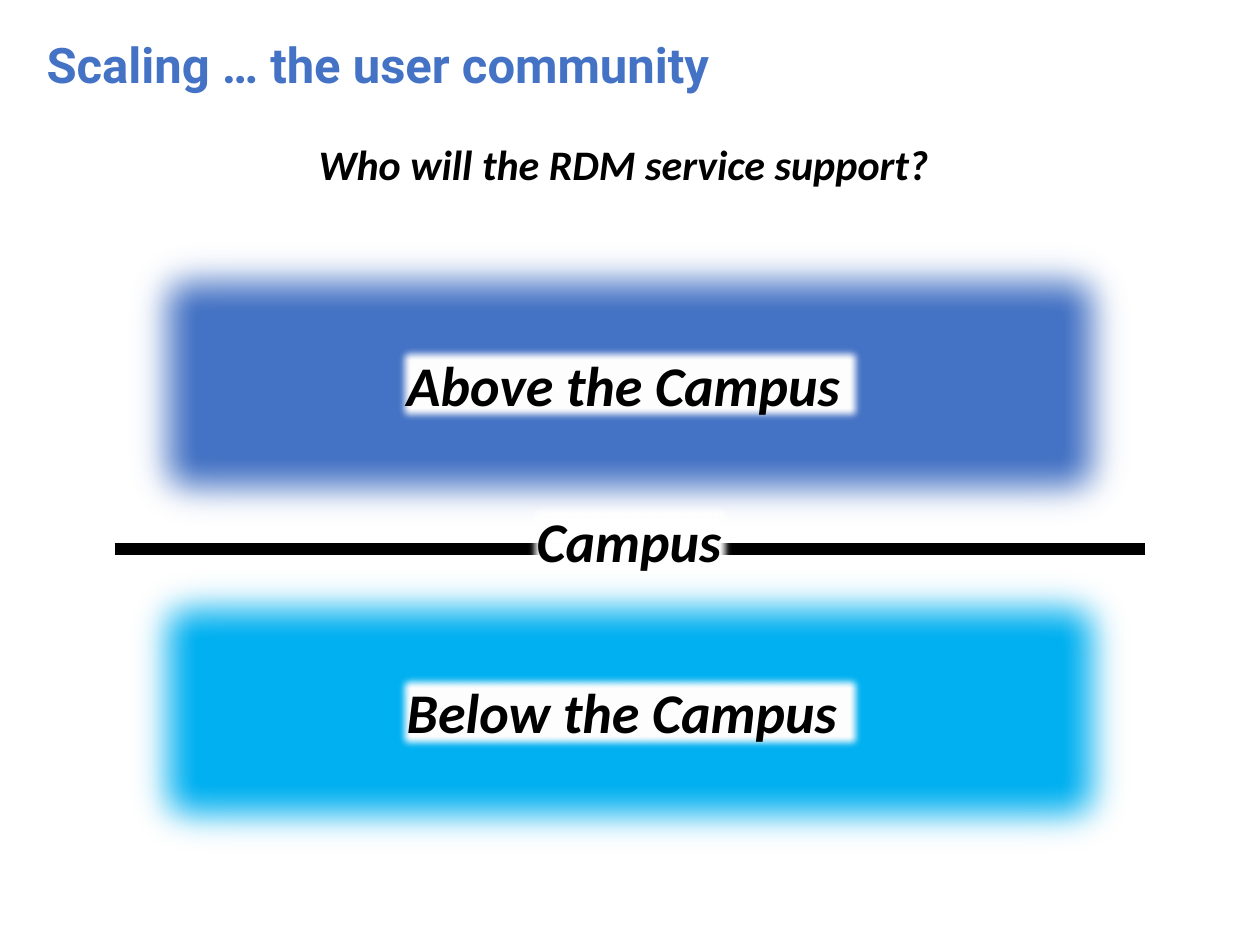
import pptx
import pptx.dml.color
import pptx.enum.shapes
import pptx.enum.text
import pptx.oxml
import pptx.oxml.ns
import pptx.util
from dataclasses import dataclass

Inches = pptx.util.Inches
Pt = pptx.util.Pt


@dataclass(frozen=True)
class Theme:
    blue: str = "4472C4"
    sky: str = "00B0F0"
    edge: str = "325491"
    black: str = "000000"
    white: str = "FFFFFF"
    head: str = "Roboto"
    body: str = "Calibri"
    title: int = 28
    ask: int = 24
    label: int = 32
    rule: int = 7
    blur: int = 25  # soft edge of the bands
    haze: int = 5   # soft edge of the labels


THEME = Theme()


def rgb(code):
    return pptx.dml.color.RGBColor.from_string(code)


def write(frame, text, size, font, color, italic=True, wrap=False):
    """Put one bold, left-aligned run into a text frame."""
    frame.word_wrap = wrap
    frame.auto_size = pptx.enum.text.MSO_AUTO_SIZE.SHAPE_TO_FIT_TEXT
    frame.vertical_anchor = pptx.enum.text.MSO_ANCHOR.TOP
    para = frame.paragraphs[0]
    para.alignment = pptx.enum.text.PP_ALIGN.LEFT
    run = para.add_run()
    run.text = text
    run.font.size = Pt(size)
    run.font.name = font
    run.font.bold = True
    run.font.italic = italic
    run.font.color.rgb = rgb(color)


def effect(shape, soft=None):
    """Replace the theme shadow with a soft edge or with nothing."""
    props = shape._element.spPr
    for old in props.findall(pptx.oxml.ns.qn("a:effectLst")):
        props.remove(old)
    edge = f'<a:softEdge rad="{Pt(soft)}"/>' if soft else ""
    space = pptx.oxml.ns.nsdecls("a")
    props.append(pptx.oxml.parse_xml(
        f"<a:effectLst {space}>{edge}</a:effectLst>"))


def block(slide, box, fill, soft, line=None):
    """Draw a rectangle with soft edges."""
    rect = pptx.enum.shapes.MSO_SHAPE.RECTANGLE
    shape = slide.shapes.add_shape(rect, *map(Inches, box))
    shape.fill.solid()
    shape.fill.fore_color.rgb = rgb(fill)
    if line:
        shape.line.color.rgb = rgb(line)
        shape.line.width = Pt(1)
    else:
        shape.line.fill.background()
    effect(shape, soft)
    return shape


def label(slide, box, width, text):
    """Centre a white label in the given box."""
    left, top, wide, high = box
    tall = 0.64
    place = (left + (wide - width) / 2, top + (high - tall) / 2, width, tall)
    shape = block(slide, place, THEME.white, THEME.haze)
    write(shape.text_frame, text, THEME.label, THEME.body, THEME.black,
          wrap=True)


def header(slide, box):
    """Title, with the question centred below it."""
    left, top, wide, high = box
    title = slide.shapes.title
    title.left, title.top = Inches(left), Inches(top)
    title.width, title.height = Inches(5.81), Inches(0.57)
    write(title.text_frame, "Scaling … the user community",
          THEME.title, THEME.head, THEME.blue, italic=False)
    span, tall = 5.14, 0.5
    ask = slide.shapes.add_textbox(
        Inches(left + (wide - span) / 2), Inches(top + high - tall),
        Inches(span), Inches(tall))
    write(ask.text_frame, "Who will the RDM service support?",
          THEME.ask, THEME.body, THEME.black)


def levels(slide, box):
    """Two bands, parted by the campus line."""
    left, top, wide, high = box
    tall, step = 2.48, 2.6
    mid = top + 2.55
    upper = (left, top, wide, tall)
    lower = (left, top + step, wide, tall)

    # Campus line
    rule = slide.shapes.add_connector(
        pptx.enum.shapes.MSO_CONNECTOR.STRAIGHT,
        Inches(left), Inches(mid), Inches(left + wide), Inches(mid))
    rule.line.color.rgb = rgb(THEME.black)
    rule.line.width = Pt(THEME.rule)
    effect(rule)

    # Bands, then the labels over them
    for band, fill in ((upper, THEME.blue), (lower, THEME.sky)):
        block(slide, band, fill, THEME.blur, THEME.edge)
    label(slide, (left, top, wide, 2 * tall), 1.68, "Campus")
    label(slide, upper, 3.74, "Above the Campus")
    label(slide, lower, 3.74, "Below the Campus")


def main():
    deck = pptx.Presentation()
    deck.slide_width, deck.slide_height = Inches(10), Inches(7.5)
    slide = deck.slides.add_slide(deck.slide_layouts[5])  # title only
    header(slide, (0.27, 0.22, 9.46, 1.33))
    levels(slide, (0.91, 1.81, 8.18, 5.08))
    deck.save("out.pptx")


if __name__ == "__main__":
    main()
